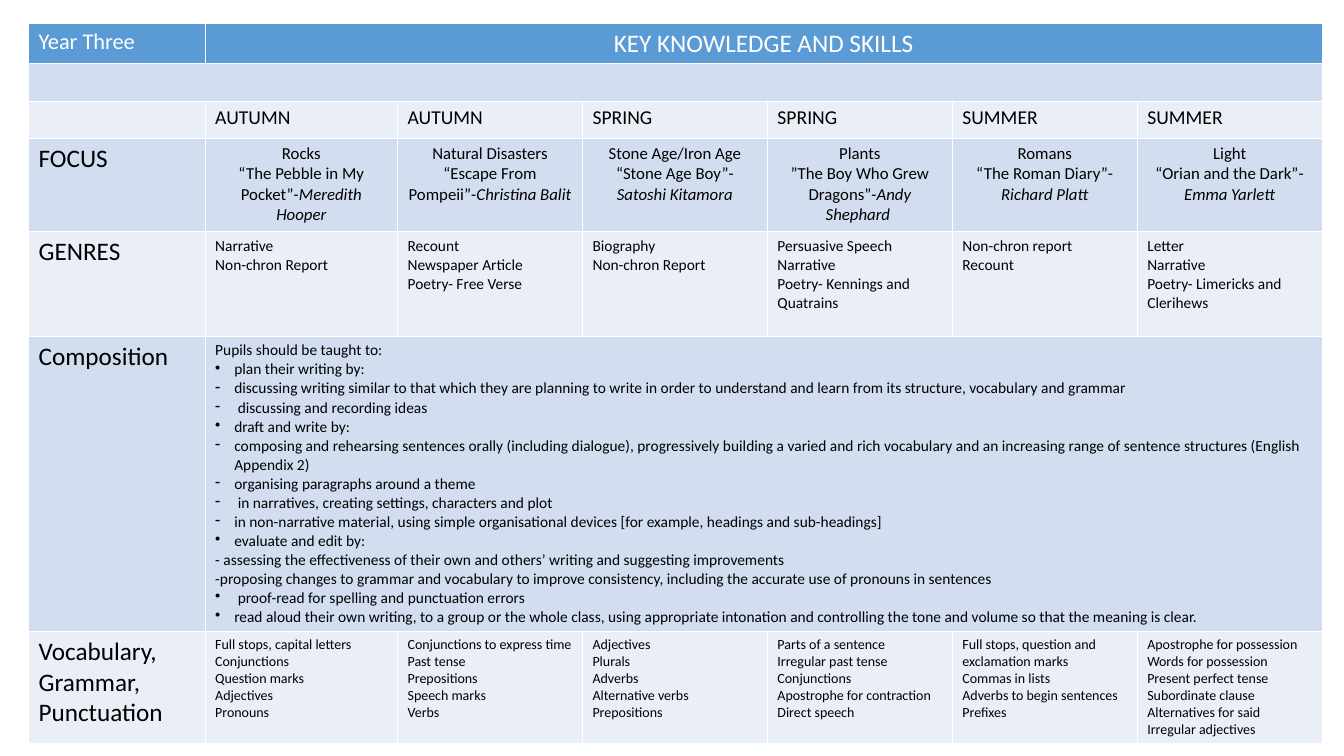
"""Build the Year Three table of key knowledge and skills."""
from dataclasses import dataclass

from lxml import etree
from pptx import Presentation
from pptx.dml.color import RGBColor
from pptx.enum.text import PP_ALIGN
from pptx.oxml.ns import qn
from pptx.table import Table, _Cell
from pptx.util import Cm, Pt

LEFT, CENTER = PP_ALIGN.LEFT, PP_ALIGN.CENTER


@dataclass(frozen=True)
class Theme:
    font: str = "Calibri"
    head: str = "5B9BD5"
    dark: str = "D2DEEF"
    pale: str = "EAEFF7"
    white: str = "FFFFFF"
    black: str = "000000"
    big: int = 18
    year: int = 16
    term: int = 14
    focus: int = 12
    body: int = 11
    small: int = 10


@dataclass(frozen=True)
class Line:
    text: str
    author: str = ""
    mark: str = ""


@dataclass(frozen=True)
class Band:
    label: str
    cells: list[list[Line]]
    size: int
    fill: str
    height: float
    align: PP_ALIGN = LEFT
    ink: str = "000000"
    lead: int = 18
    span: int = 1


THEME = Theme()
WIDTHS = [4.45, 4.85] + [4.66] * 5


def plain(*texts: str) -> list[Line]:
    return [Line(text) for text in texts]


def book(topic: str, title: str, author: str) -> list[Line]:
    return [Line(topic), Line(title, author)]


def dot(text: str) -> Line:
    return Line(text, mark="•")


def dash(text: str) -> Line:
    return Line(text, mark="-")


TERMS = [plain(term) for term in ("AUTUMN", "SPRING", "SUMMER") for _ in range(2)]

BOOKS = [
    book("Rocks", "“The Pebble in My Pocket”-", "Meredith Hooper"),
    book("Natural Disasters", "“Escape From Pompeii”-", "Christina Balit"),
    book("Stone Age/Iron Age", "“Stone Age Boy”- ", "Satoshi Kitamora"),
    book("Plants", "”The Boy Who Grew Dragons”-", "Andy Shephard "),
    book("Romans", "“The Roman Diary”-", "Richard Platt"),
    book("Light", "“Orian and the Dark”-", "Emma Yarlett"),
]

GENRES = [
    plain("Narrative", "Non-chron Report"),
    plain("Recount", "Newspaper Article", "Poetry- Free Verse"),
    plain("Biography", "Non-chron Report"),
    plain("Persuasive Speech", "Narrative", "Poetry- Kennings and Quatrains"),
    plain("Non-chron report", "Recount"),
    plain("Letter", "Narrative", "Poetry- Limericks and Clerihews"),
]

WRITING = [
    Line("Pupils should be taught to:"),
    dot("plan their writing by:"),
    dash("discussing writing similar to that which they are planning to write in order to "
         "understand and learn from its structure, vocabulary and grammar"),
    dash(" discussing and recording ideas"),
    dot("draft and write by:"),
    dash("composing and rehearsing sentences orally (including dialogue), progressively building "
         "a varied and rich vocabulary and an increasing range of sentence structures "
         "(English Appendix 2)"),
    dash("organising paragraphs around a theme"),
    dash(" in narratives, creating settings, characters and plot"),
    dash("in non-narrative material, using simple organisational devices "
         "[for example, headings and sub-headings]"),
    dot("evaluate and edit by:"),
    Line("- assessing the effectiveness of their own and others’ writing and "
         "suggesting improvements"),
    Line("-proposing changes to grammar and vocabulary to improve consistency, including the "
         "accurate use of pronouns in sentences"),
    dot(" proof-read for spelling and punctuation errors"),
    dot("read aloud their own writing, to a group or the whole class, using appropriate "
        "intonation and controlling the tone and volume so that the meaning is clear."),
]

GRAMMAR = [
    plain("Full stops, capital letters", "Conjunctions", "Question marks", "Adjectives",
          "Pronouns"),
    plain("Conjunctions to express time", "Past tense", "Prepositions", "Speech marks", "Verbs"),
    plain("Adjectives", "Plurals", "Adverbs", "Alternative verbs", "Prepositions"),
    plain("Parts of a sentence", "Irregular past tense", "Conjunctions",
          "Apostrophe for contraction", "Direct speech"),
    plain("Full stops, question and exclamation marks", "Commas in lists",
          "Adverbs to begin sentences", "Prefixes"),
    plain("Apostrophe for possession", "Words for possession", "Present perfect tense",
          "Subordinate clause", "Alternatives for said", "Irregular adjectives"),
]

BANDS = [
    Band("Year Three", [plain("KEY KNOWLEDGE AND SKILLS")], THEME.big, THEME.head, 1.03,
         CENTER, THEME.white, THEME.year, span=6),
    Band("", [], THEME.term, THEME.dark, 0.94, lead=THEME.term, span=7),
    Band("", TERMS, THEME.term, THEME.pale, 0.94, lead=THEME.term),
    Band("FOCUS", BOOKS, THEME.focus, THEME.dark, 2.34, CENTER),
    Band("GENRES", GENRES, THEME.body, THEME.pale, 2.64),
    Band("Composition", [WRITING], THEME.body, THEME.dark, 7.43, span=6),
    Band("Vocabulary, Grammar, Punctuation", GRAMMAR, THEME.small, THEME.pale, 2.82),
]


def frame(cell: _Cell, fill: str) -> None:
    props = cell._tc.get_or_add_tcPr()
    for side in ("lnL", "lnR", "lnT", "lnB"):
        edge = etree.SubElement(props, qn(f"a:{side}"), w=str(Pt(1)))
        paint = etree.SubElement(edge, qn("a:solidFill"))
        etree.SubElement(paint, qn("a:srgbClr"), val=THEME.white)
    cell.fill.solid()
    cell.fill.fore_color.rgb = RGBColor.from_string(fill)


def write(cell: _Cell, lines: list[Line], size: int, align: PP_ALIGN, ink: str) -> None:
    text = cell.text_frame
    for index, line in enumerate(lines):
        para = text.add_paragraph() if index else text.paragraphs[0]
        para.alignment = align
        if line.mark:
            props = para._p.get_or_add_pPr()
            props.set("marL", str(Cm(0.48)))
            props.set("indent", str(-Cm(0.48)))
            etree.SubElement(props, qn("a:buChar"), char=line.mark)
        for part, slant in ((line.text, False), (line.author, True)):
            if part:
                run = para.add_run()
                run.text = part
                font = run.font
                font.name, font.size = THEME.font, Pt(size)
                font.bold, font.italic = False, slant
                font.color.rgb = RGBColor.from_string(ink)
    if not lines:
        etree.SubElement(text.paragraphs[0]._p, qn("a:endParaRPr"), sz=str(size * 100))


def draw(table: Table, row: int, band: Band) -> None:
    table.rows[row].height = Cm(band.height)
    for col in range(len(WIDTHS)):
        frame(table.cell(row, col), band.fill)
    if band.span > 1:
        start = len(WIDTHS) - band.span
        table.cell(row, start).merge(table.cell(row, len(WIDTHS) - 1))
    label = plain(band.label) if band.label else []
    write(table.cell(row, 0), label, band.lead, LEFT, band.ink)
    for col, lines in enumerate(band.cells, 1):
        write(table.cell(row, col), lines, band.size, band.align, band.ink)


def main() -> None:
    deck = Presentation()
    deck.slide_width, deck.slide_height = Cm(33.87), Cm(19.05)
    slide = deck.slides.add_slide(deck.slide_layouts[6])
    high = sum(band.height for band in BANDS)
    table = slide.shapes.add_table(len(BANDS), len(WIDTHS), Cm(0.72), Cm(0.58),
                                   Cm(sum(WIDTHS)), Cm(high)).table
    table.first_row = table.horz_banding = False
    for column, width in zip(table.columns, WIDTHS):
        column.width = Cm(width)
    for row, band in enumerate(BANDS):
        draw(table, row, band)
    deck.save("out.pptx")


if __name__ == "__main__":
    main()
